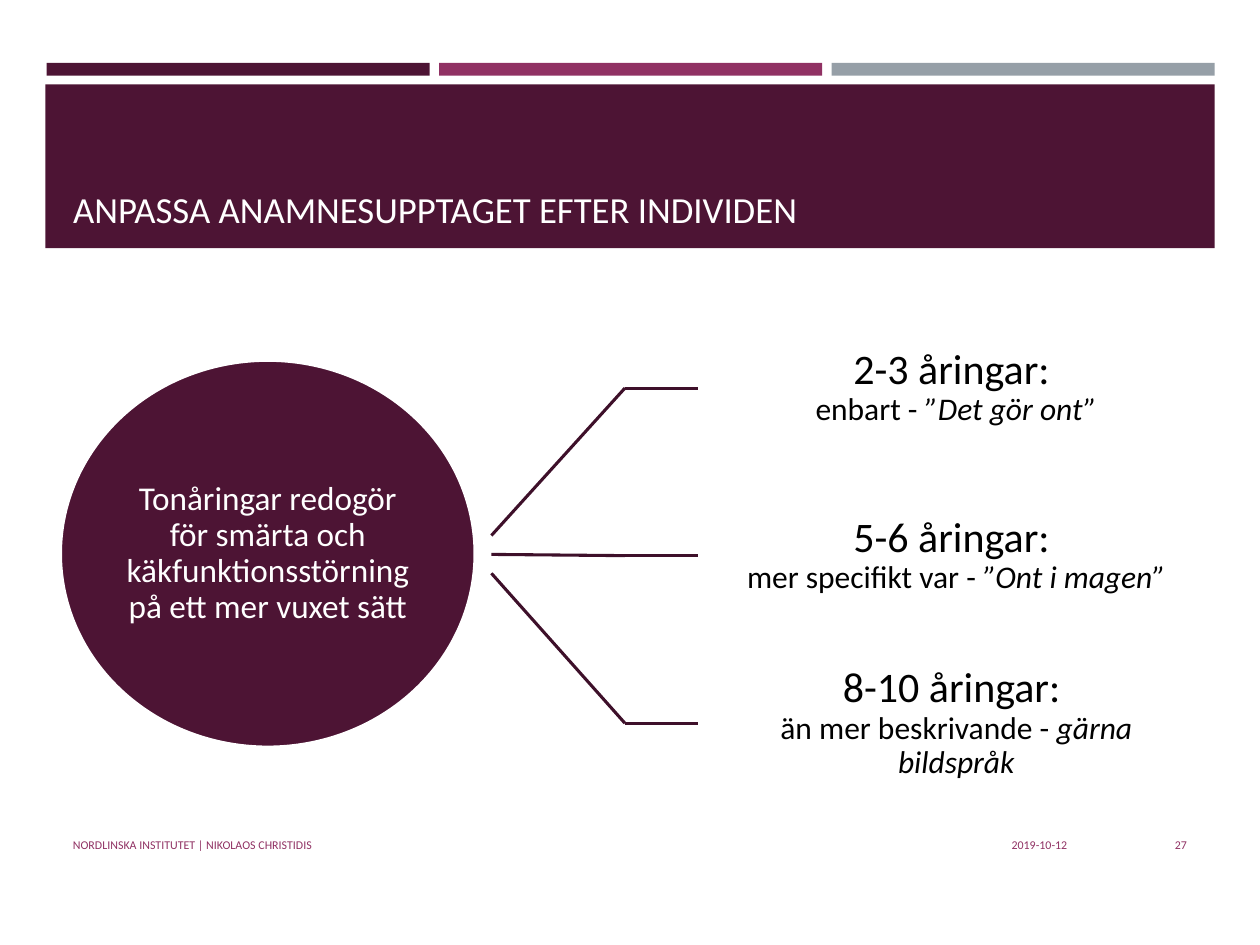
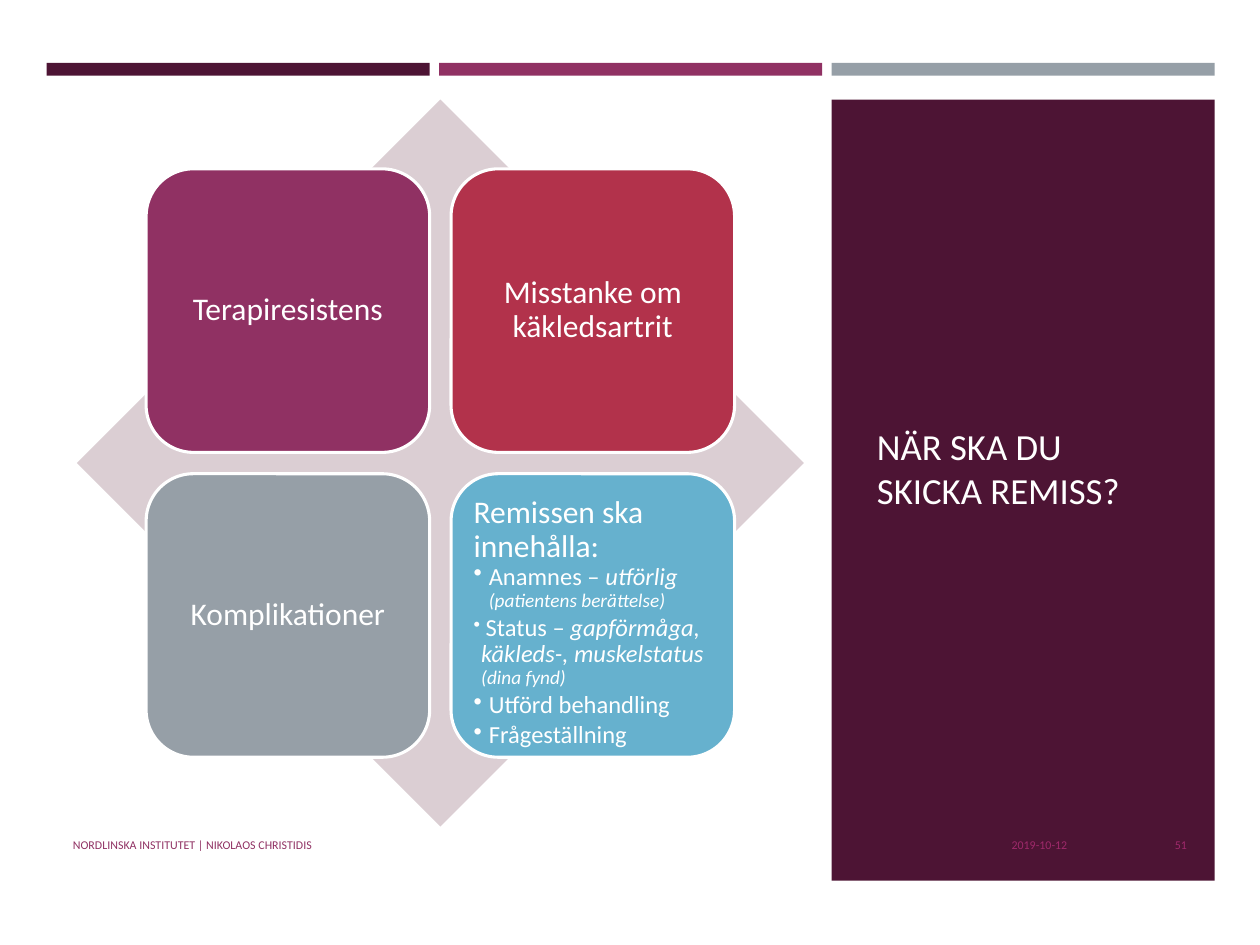
from copy import deepcopy
from dataclasses import dataclass
from lxml.etree import SubElement
from pptx import Presentation
from pptx.dml.color import RGBColor
from pptx.enum.shapes import MSO_CONNECTOR as Connector, MSO_SHAPE as Shape
from pptx.enum.text import MSO_ANCHOR as Anchor, MSO_AUTO_SIZE as AutoSize, PP_ALIGN as Align
from pptx.oxml.ns import qn
from pptx.util import Inches, Pt


@dataclass(frozen=True)
class Theme:
    font: str = "Calibri"
    plum: str = "4D1434"
    berry: str = "903163"
    grey: str = "969FA7"
    red: str = "B2324B"
    blue: str = "66B1CE"
    pale: str = "DBCED3"
    branch: str = "3E102A"
    faint: str = "9F296B"
    white: str = "FFFFFF"
    black: str = "000000"
    title: float = 21
    heading: float = 24
    circle: float = 19
    body: float = 18
    bullet: float = 14
    small: float = 11
    footer: float = 6.8
    line: float = 1.75


THEME = Theme()
BREAK = ("\n", None, False)

AUTHOR = "NORDLINSKA INSTITUTET | NIKOLAOS CHRISTIDIS"
DATE = "2019-10-12"

AGE_TITLE = "ANPASSA ANAMNESUPPTAGET EFTER INDIVIDEN"
TEENAGERS = "Tonåringar redogör för smärta och käkfunktionsstörning på ett mer vuxet sätt"
AGE_GROUPS = [
    ("2-3 åringar: ", "enbart - ", "”Det gör ont”"),
    ("5-6 åringar: ", "mer specifikt var - ", "”Ont i magen”"),
    ("8-10 åringar: ", "än mer beskrivande - ", "gärna bildspråk"),
]

REFERRAL_TITLE = "NÄR SKA DU SKICKA REMISS?"
REASONS = [
    ("Terapiresistens", THEME.berry),
    ("Misstanke om käkledsartrit", THEME.red),
    ("Komplikationer", THEME.grey),
]
REFERRAL_HEADING = "Remissen ska innehålla:"
REFERRAL_POINTS = [
    (0.12, [("Anamnes – ", THEME.bullet, False), ("utförlig ", THEME.bullet, True), BREAK,
            ("(patientens berättelse)", THEME.small, True)]),
    (0.06, [(" ", THEME.small, False), ("Status – ", THEME.bullet, False),
            ("gapförmåga, käkleds-, muskelstatus ", THEME.bullet, True), BREAK,
            ("(dina fynd)", THEME.small, True)]),
    (0.12, [("Utförd behandling", THEME.bullet, False)]),
    (0.12, [("Frågeställning", THEME.bullet, False)]),
]


def color(value):
    return RGBColor.from_string(value)


def inches(*values):
    return [Inches(value) for value in values]


def add_block(page, kind, place, fill, outline=None):
    block = page.shapes.add_shape(kind, *inches(*place))
    block.shadow.inherit = False
    block.fill.solid()
    block.fill.fore_color.rgb = color(fill)
    if outline:
        block.line.color.rgb = color(outline)
        block.line.width = Pt(THEME.line)
    else:
        block.line.fill.background()
    return block


def set_frame(box, anchor, margin=None):
    frame = box.text_frame
    frame.word_wrap = True
    frame.auto_size = AutoSize.NONE
    frame.vertical_anchor = anchor
    if margin is not None:
        frame.margin_left = frame.margin_right = Inches(margin)
        frame.margin_top = frame.margin_bottom = Inches(margin)
    return frame


def fill_para(para, spans, ink, align=Align.LEFT, spacing=0.9):
    para.alignment = align
    para.line_spacing = spacing
    for text, size, italic in spans:
        if text == "\n":
            para.add_line_break()
            para._p[-1].append(deepcopy(span._r.rPr))
            continue
        span = para.add_run()
        span.text = text
        span.font.name = THEME.font
        span.font.size = Pt(size)
        span.font.italic = italic
        span.font.color.rgb = color(ink)


def add_text(page, place, spans, ink, align=Align.LEFT, margin=None):
    box = page.shapes.add_textbox(*inches(*place))
    fill_para(set_frame(box, Anchor.MIDDLE, margin).paragraphs[0], spans, ink, align)
    return box


def add_bullet(para, indent):
    props = para._p.get_or_add_pPr()
    props.set("marL", str(Inches(indent)))
    props.set("indent", str(-Inches(indent)))
    SubElement(props, qn("a:buChar")).set("char", "•")


def add_line(page, start, end):
    line = page.shapes.add_connector(Connector.STRAIGHT, *inches(*start, *end))
    line.line.color.rgb = color(THEME.branch)
    line.line.width = Pt(THEME.line)
    SubElement(line._element.spPr, qn("a:effectLst"))
    return line


def start_page(deck, title, title_place, anchor, panel_place, number, date_ink):
    page = deck.slides.add_slide(deck.slide_layouts[5])
    left, step = 0.37, (6.6 - 0.37) / 2
    for index, fill in enumerate((THEME.plum, THEME.berry, THEME.grey)):
        add_block(page, Shape.RECTANGLE, (left + index * step, 0.5, 3.04, 0.1), fill)
    add_block(page, Shape.RECTANGLE, panel_place, THEME.plum)

    heading = page.shapes.title
    heading.left, heading.top, heading.width, heading.height = inches(*title_place)
    frame = set_frame(heading, anchor)
    fill_para(frame.paragraphs[0], [(title, THEME.title, False)], THEME.white, spacing=1.0)
    heading.element.getparent().append(heading.element)

    for x, width, text, ink, align in (
        (0.48, 5.67, AUTHOR, THEME.berry, Align.LEFT),
        (6.86, 1.71, DATE, date_ink, Align.RIGHT),
        (8.66, 0.86, number, date_ink, Align.RIGHT),
    ):
        add_text(page, (x, 6.51, width, 0.4), [(text, THEME.footer, False)], ink, align)
    return page


def build_ages(deck):
    page = start_page(deck, AGE_TITLE, (0.48, 0.77, 9.05, 1.11), Anchor.BOTTOM,
                      (0.36, 0.67, 9.28, 1.3), "27", THEME.berry)
    circle = add_block(page, Shape.OVAL, (0.48, 2.86, 3.29, 3.07), THEME.plum, THEME.white)
    fill_para(set_frame(circle, Anchor.MIDDLE, 0).paragraphs[0],
              [(TEENAGERS, THEME.circle, False)], THEME.white, Align.CENTER)

    left, height, bend = 5.54, 1.34, 4.96
    for index, (age, lead, quote) in enumerate(AGE_GROUPS):
        top = 2.41 + index * 1.33
        middle = top + height / 2
        spans = [(age, THEME.heading, False), BREAK,
                 (lead, THEME.body, False), (quote, THEME.body, True)]
        label = add_text(page, (left, top, 4.1, height), spans, THEME.black, Align.CENTER, 0.19)
        add_line(page, (3.9, 4.25 + index * 0.15), (bend, middle))
        add_line(page, (bend, middle), (left, middle)).end_connect(label, 1)


def build_referral(deck):
    page = start_page(deck, REFERRAL_TITLE, (6.86, 1.14, 2.5, 5.15), Anchor.MIDDLE,
                      (6.6, 0.79, 3.04, 6.2), "51", THEME.faint)
    add_block(page, Shape.DIAMOND, (0.61, 0.79, 5.77, 5.77), THEME.pale)

    size, step = 2.25, 2.42
    for index, (text, fill) in enumerate(REASONS + [(REFERRAL_HEADING, THEME.blue)]):
        row, column = divmod(index, 2)
        place = (1.16 + column * step, 1.34 + row * step, size, size)
        tile = add_block(page, Shape.ROUNDED_RECTANGLE, place, fill, THEME.white)
        is_list = text == REFERRAL_HEADING
        frame = set_frame(tile, Anchor.TOP if is_list else Anchor.MIDDLE, 0.07)
        fill_para(frame.paragraphs[0], [(text, THEME.body, False)], THEME.white,
                  Align.LEFT if is_list else Align.CENTER)

    for indent, spans in REFERRAL_POINTS:
        para = frame.add_paragraph()
        fill_para(para, spans, THEME.white)
        para.space_after = Pt(2)
        add_bullet(para, indent)


def main():
    deck = Presentation()
    deck.slide_width, deck.slide_height = inches(10, 7.5)
    build_ages(deck)
    build_referral(deck)
    deck.save("out.pptx")


if __name__ == "__main__":
    main()
